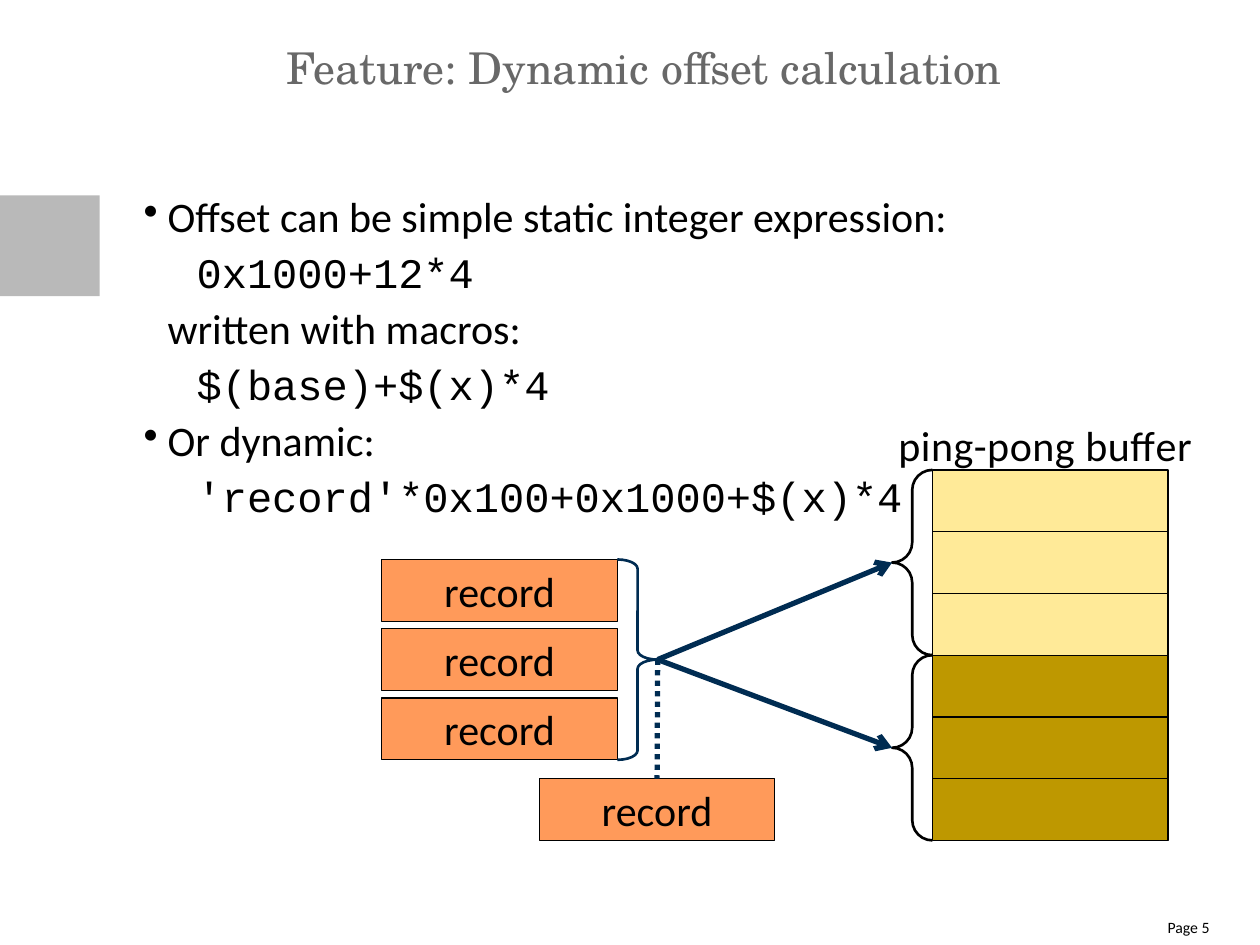
from dataclasses import dataclass

from lxml import etree
from pptx import Presentation
from pptx.dml.color import RGBColor
from pptx.enum.dml import MSO_LINE
from pptx.enum.shapes import MSO_CONNECTOR, MSO_SHAPE as SHAPE
from pptx.enum.text import MSO_ANCHOR as ANCHOR, MSO_AUTO_SIZE as AUTO, PP_ALIGN as ALIGN
from pptx.oxml.ns import qn
from pptx.util import Inches, Pt


@dataclass(frozen=True)
class Theme:
    black: str = "000000"
    title: str = "686868"
    side: str = "B9B9B9"
    record: str = "FF9A5A"
    ping: str = "FFEA98"
    pong: str = "BE9800"
    navy: str = "002C52"
    title_font: str = "TeX Gyre Schola"
    body_font: str = "Calibri"
    code_font: str = "Courier New"
    title_size: int = 25
    body_size: int = 24
    page_size: int = 9


T = Theme()
BOX_W, BOX_H, BRACE_W = 1.87, 0.49, 0.32


def rgb(value):
    return RGBColor.from_string(value)


def style(font, size=T.body_size, name=T.body_font, color=T.black):
    font.size, font.name = Pt(size), name
    font.color.rgb = rgb(color)


def bare_frame(tf, wrap=True):
    """Remove insets and set wrapping, anchored at the top."""
    tf.margin_left = tf.margin_right = tf.margin_top = tf.margin_bottom = 0
    tf.word_wrap, tf.auto_size = wrap, AUTO.NONE
    tf.vertical_anchor = ANCHOR.TOP


def add_text(s, box, text, size=T.body_size, align=ALIGN.LEFT, wrap=True):
    tf = s.shapes.add_textbox(*map(Inches, box)).text_frame
    bare_frame(tf, wrap)
    tf.text = text
    p = tf.paragraphs[0]
    p.alignment = align
    style(p.runs[0].font, size)
    return p


def add_box(s, kind, box, fill=None, line=None, width=0.75):
    sp = s.shapes.add_shape(kind, *map(Inches, box))
    sp.shadow.inherit = False
    if fill:
        sp.fill.solid()
        sp.fill.fore_color.rgb = rgb(fill)
    else:
        sp.fill.background()
    if line:
        sp.line.color.rgb = rgb(line)
        sp.line.width = Pt(width)
    else:
        sp.line.fill.background()
    return sp


def add_brace(s, kind, box, bend, color):
    sp = add_box(s, kind, box, line=color, width=1.5)
    sp.adjustments[0] = bend


def add_line(s, start, end, arrow=False):
    cx = s.shapes.add_connector(MSO_CONNECTOR.STRAIGHT, *map(Inches, start + end))
    cx.line.color.rgb = rgb(T.navy)
    cx.line.width = Pt(3)
    if arrow:
        etree.SubElement(cx.line._get_or_add_ln(), qn("a:tailEnd"), type="arrow")
    etree.SubElement(cx._element.spPr, qn("a:effectLst"))
    return cx


def add_title(s, box, text):
    title = s.shapes.title
    title.left, title.top, title.width, title.height = map(Inches, box)
    tf = title.text_frame
    bare_frame(tf)
    tf.text = text
    p = tf.paragraphs[0]
    p.alignment = ALIGN.LEFT
    style(p.runs[0].font, T.title_size, T.title_font, T.title)


def add_bullet(p):
    color = etree.SubElement(p._p.get_or_add_pPr(), qn("a:buClr"))
    etree.SubElement(color, qn("a:srgbClr"), val=T.black)
    etree.SubElement(p._p.pPr, qn("a:buChar"), char="•")


def add_body(s, box, lines):
    """Write (kind, text) lines, where kind is bullet, plain or code."""
    tf = s.shapes.add_textbox(*map(Inches, box)).text_frame
    bare_frame(tf)
    for i, (kind, text) in enumerate(lines):
        p = tf.add_paragraph() if i else tf.paragraphs[0]
        p.text = text
        p.line_spacing = Pt(32)
        pPr = p._p.get_or_add_pPr()
        pPr.set("marL", str(Inches(0.42 if kind == "code" else 0.19)))
        pPr.set("indent", str(Inches(-0.19 if kind == "bullet" else 0)))
        if kind == "bullet":
            add_bullet(p)
        style(p.runs[0].font, name=T.code_font if kind == "code" else T.body_font)


def add_record(s, left, top):
    sp = add_box(s, SHAPE.RECTANGLE, (left, top, BOX_W, BOX_H), T.record, T.black)
    tf = sp.text_frame
    tf.text = "record"
    tf.vertical_anchor = ANCHOR.MIDDLE
    p = tf.paragraphs[0]
    p.alignment = ALIGN.CENTER
    style(p.runs[0].font)
    return sp


def add_records(s, left, top, count=3, pitch=0.55):
    """Stack records with a brace and return the tip of the brace."""
    for i in range(count):
        add_record(s, left, top + i * pitch)
    height = (count - 1) * pitch + BOX_H
    add_brace(s, SHAPE.RIGHT_BRACE, (left + BOX_W, top, BRACE_W, height), 0.23, T.navy)
    return left + BOX_W + BRACE_W, top + height / 2


def add_buffer(s, left, top, rows=3):
    """Stack both buffer halves with braces and return the brace tips."""
    tips = []
    height = rows * BOX_H
    for half, fill in enumerate((T.ping, T.pong)):
        y = top + half * height
        for i in range(rows):
            cell = (left, y + i * BOX_H, BOX_W, BOX_H)
            add_box(s, SHAPE.FLOWCHART_PROCESS, cell, fill, T.black)
        brace = (left - BRACE_W, y, BRACE_W, height)
        add_brace(s, SHAPE.LEFT_BRACE, brace, 0.5, T.black)
        tips.append((left - BRACE_W, y + height / 2))
    label = add_text(s, (7.13, top - 0.44, 2.36, 0.42), "ping-pong buffer", wrap=False)
    label.line_spacing = 1.1
    label.runs[0].font._element.set("spc", "30")
    return tips


def add_diagram(s, left, top):
    source = add_records(s, left, top + 0.71)
    for target in add_buffer(s, left + 4.37, top):
        add_line(s, source, target, arrow=True)
    selector = add_record(s, left + 1.25, top + 2.45)
    dots = add_line(s, source, (source[0], top + 2.45))
    dots.line.dash_style = MSO_LINE.ROUND_DOT
    dots.end_connect(selector, 0)


def main():
    prs = Presentation()
    prs.slide_width, prs.slide_height = Inches(10), Inches(7.5)
    s = prs.slides.add_slide(prs.slide_layouts[5])
    add_box(s, SHAPE.RECTANGLE, (0, 1.55, 0.79, 0.8), T.side)
    add_title(s, (2.27, 0.32, 7.34, 0.56), "Feature: Dynamic offset calculation")
    add_body(s, (1.14, 1.47, 7.48, 5.12), [
        ("bullet", "Offset can be simple static integer expression:"),
        ("code", "0x1000+12*4"),
        ("plain", "written with macros:"),
        ("code", "$(base)+$(x)*4"),
        ("bullet", "Or dynamic:"),
        ("code", "'record'*0x100+0x1000+$(x)*4"),
    ])
    add_diagram(s, 3.03, 3.73)
    add_text(s, (8.97, 7.28, 0.63, 0.22), "Page 5", T.page_size, ALIGN.RIGHT)
    prs.save("out.pptx")


if __name__ == "__main__":
    main()
